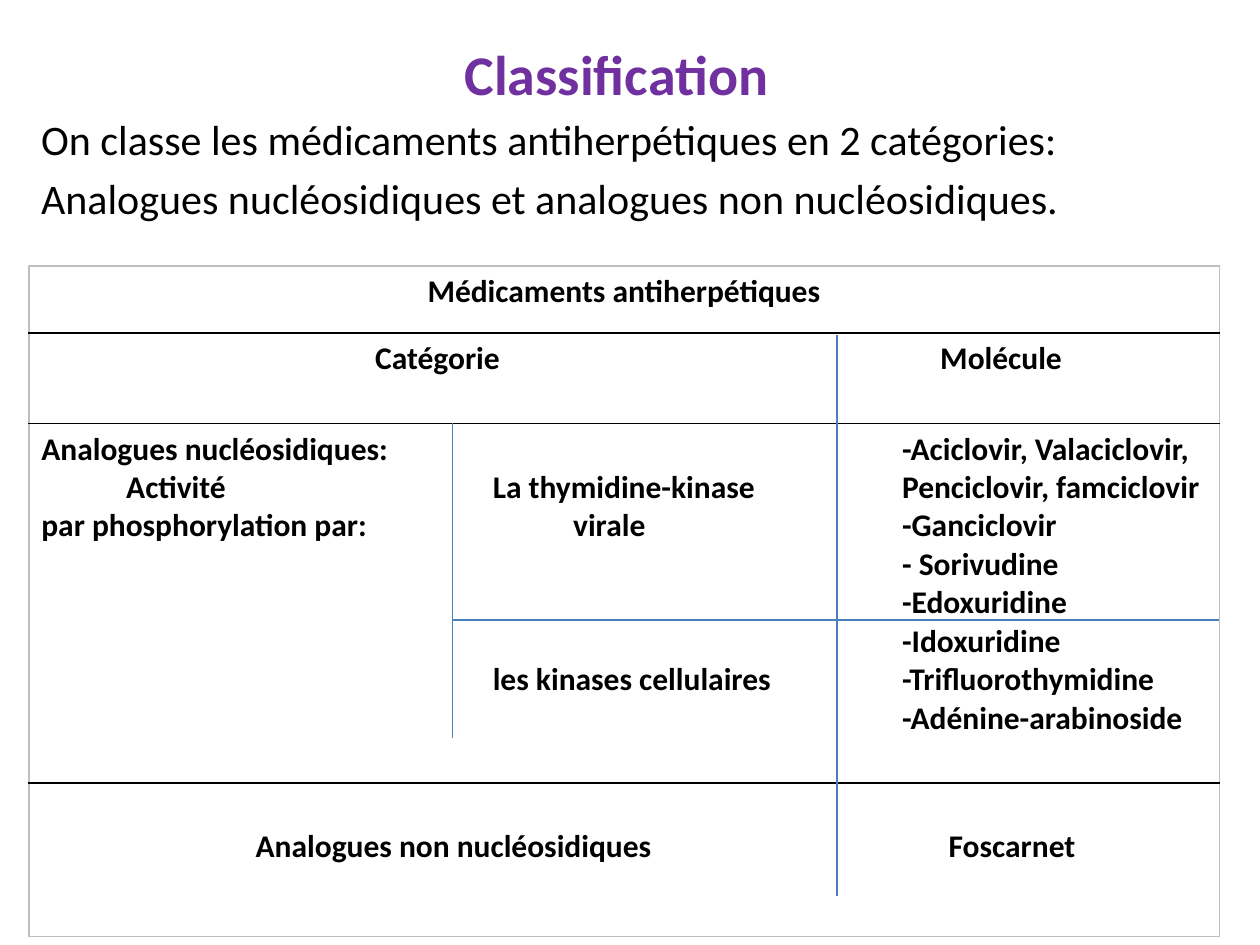
import pptx
import pptx.dml.color
import pptx.enum.shapes
import pptx.enum.text
import pptx.oxml
import pptx.oxml.ns
import pptx.util

Cm = pptx.util.Cm
Pt = pptx.util.Pt
ALIGN = pptx.enum.text.PP_ALIGN
ANCHOR = pptx.enum.text.MSO_ANCHOR

COLORS = {"title": "7030A0", "text": "000000", "line": "4B7EBC",
          "rule": "000000", "edge": "BFBFBF"}
LEFT, TOP, WIDTH = 0.58, 5.36, 24.0
RIGHT = LEFT + WIDTH
ROWS = (1.35, 1.83, 7.24, 3.1)
KINASE, DRUG = 9.1, 17.35  # text columns, measured from the cell's text edge

# Each row: alignment, top margin, then (tab stops, text) for each line
TABLE = (
    (ALIGN.CENTER, 0.13, [((), "Médicaments antiherpétiques")]),
    (ALIGN.LEFT, 0.13, [((6.73, 18.12), "\tCatégorie\tMolécule")]),
    (ALIGN.LEFT, 0.13, [
        ((DRUG,), "Analogues nucléosidiques:\t-Aciclovir, Valaciclovir,"),
        ((1.71, KINASE, DRUG),
         "\tActivité\tLa thymidine-kinase\tPenciclovir, famciclovir"),
        ((10.72, DRUG), "par phosphorylation par:\tvirale\t-Ganciclovir"),
        ((DRUG,), "\t- Sorivudine"),
        ((DRUG,), "\t-Edoxuridine"),
        ((DRUG,), "\t-Idoxuridine"),
        ((KINASE, DRUG), "\tles kinases cellulaires\t-Trifluorothymidine"),
        ((DRUG,), "\t-Adénine-arabinoside"),
    ]),
    (ALIGN.LEFT, 0.9,
     [((4.32, 18.29), "\tAnalogues non nucléosidiques\tFoscarnet")]),
)


def rgb(key):
    return pptx.dml.color.RGBColor.from_string(COLORS[key])


def node(tag, body="", attrs=""):
    space = pptx.oxml.ns.nsdecls("a")
    return pptx.oxml.parse_xml(f"<a:{tag} {space} {attrs}>{body}</a:{tag}>")


class Deck:
    font = "Calibri"

    def __init__(self):
        self.file = pptx.Presentation()
        self.file.slide_width, self.file.slide_height = Cm(25.4), Cm(19.05)
        self.slide = self.file.slides.add_slide(self.file.slide_layouts[5])

    def style(self, para, size, color="text", bold=False, align=ALIGN.LEFT):
        para.alignment = align
        for run in para.runs:
            run.font.name, run.font.size = self.font, Pt(size)
            run.font.bold = bold
            run.font.color.rgb = rgb(color)

    def title(self, text, x, y, w, h):
        shape = self.slide.shapes.title
        shape.left, shape.top, shape.width, shape.height = map(Cm, (x, y, w, h))
        frame = shape.text_frame
        frame.text = text
        frame.vertical_anchor = ANCHOR.MIDDLE
        self.style(frame.paragraphs[0], 32, "title", True, ALIGN.CENTER)

    def text(self, lines, x, y, w, h):
        frame = self.slide.shapes.add_textbox(*map(Cm, (x, y, w, h))).text_frame
        frame.word_wrap = True
        frame.text = "\n".join(lines)
        for i, para in enumerate(frame.paragraphs):
            para.space_before = Pt(4.8 if i else 0)
            self.style(para, 24)

    def table(self, rows, heights, x, y, w):
        shape = self.slide.shapes.add_table(
            len(rows), 1, Cm(x), Cm(y), Cm(w), Cm(sum(heights)))
        grid = shape.table
        grid.first_row = grid.horz_banding = False
        for i, (align, margin, lines) in enumerate(rows):
            grid.rows[i].height = Cm(heights[i])
            cell = grid.cell(i, 0)
            cell.fill.background()
            cell.margin_top = Cm(margin)
            cell.text_frame.text = "\n".join(text for _, text in lines)
            for para, (tabs, _) in zip(cell.text_frame.paragraphs, lines):
                self.style(para, 18, bold=True, align=align)
                self.tabs(para, tabs)
            self.border(cell, i == 0, i == len(rows) - 1)

    def tabs(self, para, stops):
        if stops:
            body = "".join(f'<a:tab pos="{Cm(s)}" algn="l"/>' for s in stops)
            para._p.get_or_add_pPr().append(node("tabLst", body))

    def border(self, cell, first, last):
        """Grey on the outside of the table, black between rows."""
        props = cell._tc.get_or_add_tcPr()
        sides = (("L", True), ("R", True), ("T", first), ("B", last))
        for i, (side, outer) in enumerate(sides):
            color = COLORS["edge" if outer else "rule"]
            fill = f'<a:solidFill><a:srgbClr val="{color}"/></a:solidFill>'
            props.insert(i, node(f"ln{side}", fill, f'w="{Pt(1)}"'))

    def line(self, x1, y1, x2, y2):
        link = self.slide.shapes.add_connector(
            pptx.enum.shapes.MSO_CONNECTOR.STRAIGHT,
            *map(Cm, (x1, y1, x2, y2)))
        link.line.color.rgb = rgb("line")
        link.line.width = Pt(0.75)
        link._element.spPr.append(node("effectLst"))


def main():
    deck = Deck()
    deck.title("Classification", LEFT, 0.58, 23.7, 1.78)
    deck.text(("On classe les médicaments antiherpétiques en 2 catégories:",
               "Analogues nucléosidiques et analogues non nucléosidiques."),
              LEFT, 2.16, 24.2, 2.6)
    deck.table(TABLE, ROWS, LEFT, TOP, WIDTH)
    deck.line(16.87, 6.76, 16.87, 18.06)
    deck.line(9.12, 8.53, 9.12, 14.88)
    deck.line(RIGHT, 12.5, 9.12, 12.5)
    deck.file.save("out.pptx")


if __name__ == "__main__":
    main()
